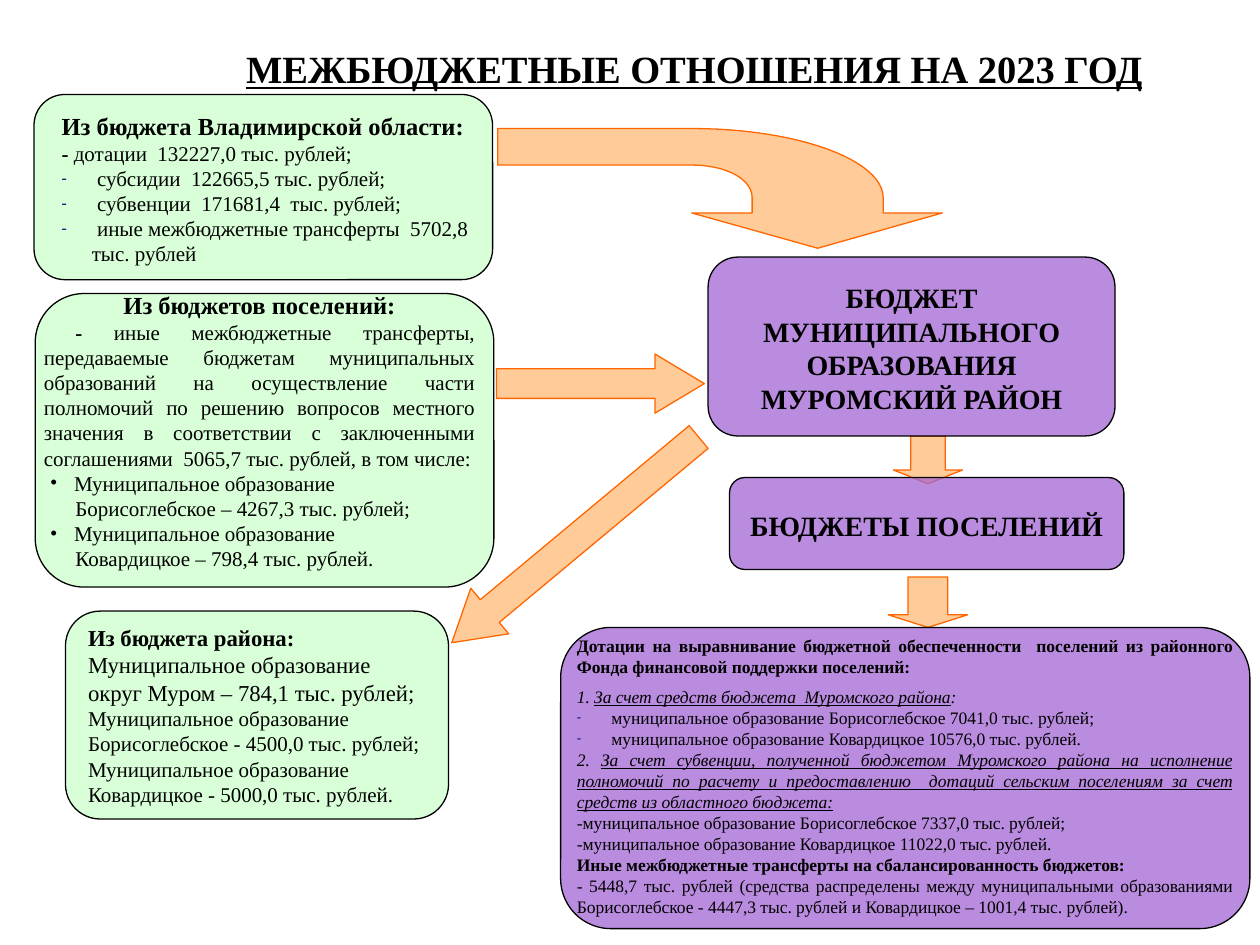
from lxml.etree import SubElement
from pptx import Presentation
from pptx.dml.color import RGBColor
from pptx.enum.shapes import MSO_SHAPE as Shape
from pptx.enum.text import MSO_ANCHOR as Anchor, PP_ALIGN as Align
from pptx.oxml.ns import qn
from pptx.util import Inches, Pt

GREEN, PURPLE, ORANGE, RUST = "CCFFCC", "A265D5", "FFCC99", "FF6600"
BLACK, NAVY = "000000", "00007D"
FONT = "Times New Roman"
BOLD, ITALIC = {"bold": True}, {"italic": True}
LINKED = {"italic": True, "underline": True}
DASH = {"bullet": "-", "left": 0.24, "first": -0.24}
DOT = {"bullet": "•", "left": 0.24, "first": -0.19}
HANG = {"left": 0.25}


def paint(shape, fill, line, opacity=100):
    shape.shadow.inherit = False
    shape.fill.solid()
    shape.fill.fore_color.rgb = RGBColor.from_string(fill)
    shape.line.color.rgb = RGBColor.from_string(line)
    shape.line.width = Pt(0.75)
    if opacity < 100:
        color = shape.fill._xPr.find(qn("a:solidFill"))[0]
        SubElement(color, qn("a:alpha"), val=str(opacity * 1000))


def write(frame, size, align, paragraphs):
    frame.word_wrap = True
    for index, (layout, runs) in enumerate(paragraphs):
        paragraph = frame.paragraphs[0] if index == 0 else frame.add_paragraph()
        paragraph.alignment = layout.get("align", align)
        paragraph.space_before = Pt(layout.get("before", 0))
        properties = paragraph._p.get_or_add_pPr()
        properties.set("marL", str(Inches(layout.get("left", 0))))
        properties.set("indent", str(Inches(layout.get("first", 0))))
        if "bullet" in layout:
            if layout["bullet"] == "-":
                color = SubElement(properties, qn("a:buClr"))
                SubElement(color, qn("a:srgbClr"), val=NAVY)
                SubElement(properties, qn("a:buSzPct"), val="75000")
            SubElement(properties, qn("a:buFont"), typeface=FONT)
            SubElement(properties, qn("a:buChar"), char=layout["bullet"])
        for text, style in runs:
            run = paragraph.add_run()
            run.text = text
            run.font.name = FONT
            run.font.color.rgb = RGBColor.from_string(BLACK)
            values = {"size": size, "bold": False, "italic": False, "underline": False, **style}
            values["size"] = Pt(values["size"])
            for name, value in values.items():
                setattr(run.font, name, value)


presentation = Presentation()
presentation.slide_width, presentation.slide_height = Inches(10), Inches(7.5)
slide = presentation.slides.add_slide(presentation.slide_layouts[5])
shapes = slide.shapes

title = shapes.title
title.left, title.top, title.width, title.height = map(Inches, (1.01, 0.25, 9, 0.58))
title.text_frame.vertical_anchor = Anchor.MIDDLE
write(title.text_frame, 22, Align.CENTER, [
    ({}, [("МЕЖБЮДЖЕТНЫЕ ОТНОШЕНИЯ НА 2023 ГОД", {"bold": True, "underline": True})]),
])

bend = [
    [(6.49, 1.97)], [(7.48, 1.69)], [(7.01, 1.69)], [(7.01, 1.57)],
    [(7.01, 1.57), (7.01, 1.27), (6.33, 1.02), (5.49, 1.02)],
    [(3.95, 1.02)], [(3.95, 1.31)], [(5.49, 1.31)],
    [(5.49, 1.31), (5.76, 1.31), (5.97, 1.42), (5.97, 1.57)],
    [(5.97, 1.69)], [(5.49, 1.69)],
]
outline = []
for part in bend:
    if len(part) == 1:
        outline.append(tuple(map(Inches, part[0])))
        continue
    for step in range(1, 25):
        t = step / 24
        weights = ((1 - t) ** 3, 3 * t * (1 - t) ** 2, 3 * t * t * (1 - t), t ** 3)
        outline.append(tuple(
            Inches(sum(weight * point[axis] for weight, point in zip(weights, part)))
            for axis in (0, 1)
        ))
builder = shapes.build_freeform(*outline[0])
builder.add_line_segments(outline[1:], close=True)
paint(builder.convert_to_shape(), ORANGE, RUST)

arrows = [
    (Shape.RIGHT_ARROW, (3.94, 2.81, 1.65, 0.47), 0.835, 0),
    (Shape.RIGHT_ARROW, (3.29, 4.05, 2.55, 0.47), 0.835, 140.2),
    (Shape.DOWN_ARROW, (7.09, 3.46, 0.55, 0.38), 0.29, 0),
    (Shape.DOWN_ARROW, (7.05, 4.58, 0.63, 0.4), 0.25, 0),
]
for kind, place, head, rotation in arrows:
    arrow = shapes.add_shape(kind, *map(Inches, place))
    arrow.adjustments[0], arrow.adjustments[1] = 0.5, head
    arrow.rotation = rotation
    paint(arrow, ORANGE, RUST)

boxes = [
    ((0.27, 0.75, 3.64, 1.47), GREEN),
    ((0.28, 2.33, 3.64, 2.33), GREEN),
    ((5.62, 2.04, 3.23, 1.42), PURPLE),
    ((5.79, 3.79, 3.13, 0.73), PURPLE),
    ((4.45, 4.98, 5.47, 2.39), PURPLE),
    ((0.52, 4.85, 3.04, 1.65), GREEN),
]
for place, fill in boxes:
    box = shapes.add_shape(Shape.FLOWCHART_ALTERNATE_PROCESS, *map(Inches, place))
    paint(box, fill, BLACK, 74)

district = box.text_frame
district.vertical_anchor = Anchor.MIDDLE
district.margin_right = 0
write(district, 12, Align.LEFT, [
    ({}, [("Из бюджета района:", {"size": 13, "bold": True})]),
    ({}, [("Муниципальное образование", {"size": 13})]),
    ({}, [("округ Муром – 784,1 тыс. рублей;", {"size": 13})]),
    ({}, [("Муниципальное образование", {})]),
    ({}, [("Борисоглебское - 4500,0 тыс. рублей;", {})]),
    ({}, [("Муниципальное образование", {})]),
    ({}, [("Ковардицкое - 5000,0 тыс. рублей.", {})]),
])

texts = [
    ((0.39, 0.83, 3.51, 1.35), 12, Align.LEFT, [
        ({}, [("Из бюджета Владимирской области:", {"size": 14, "bold": True})]),
        ({}, [("-", BOLD), (" дотации  132227,0 тыс. рублей;", {})]),
        (DASH, [(" субсидии  122665,5 тыс. рублей;", {})]),
        (DASH, [(" субвенции  171681,4  тыс. рублей;", {})]),
        (DASH, [(" иные межбюджетные трансферты  5702,8 тыс. рублей", {})]),
    ]),
    ((0.25, 2.25, 3.62, 2.36), 12, Align.JUSTIFY, [
        ({"align": Align.CENTER}, [("Из бюджетов поселений:", {"size": 14, "bold": True})]),
        ({"first": 0.25}, [("-", BOLD), (
            " иные межбюджетные трансферты, передаваемые бюджетам муниципальных образований "
            "на осуществление части полномочий по решению вопросов местного значения в соответствии "
            "с заключенными соглашениями  5065,7 тыс. рублей, в том числе:", {})]),
        (DOT, [("Муниципальное образование", {})]),
        (HANG, [("Борисоглебское – 4267,3 тыс. рублей;", {})]),
        (DOT, [("Муниципальное образование", {})]),
        (HANG, [("Ковардицкое – 798,4 тыс. рублей.", {})]),
    ]),
    ((5.74, 2.18, 2.99, 1.1), 16, Align.CENTER, [
        ({}, [("БЮДЖЕТ МУНИЦИПАЛЬНОГО ОБРАЗОВАНИЯ МУРОМСКИЙ РАЙОН", BOLD)]),
    ]),
    ((5.82, 3.99, 3.07, 0.35), 16, Align.CENTER, [
        ({}, [("БЮДЖЕТЫ ПОСЕЛЕНИЙ", BOLD)]),
    ]),
    ((4.48, 4.99, 5.4, 2.51), 10, Align.JUSTIFY, [
        ({}, [("Дотации на выравнивание бюджетной обеспеченности  поселений из районного "
               "Фонда финансовой поддержки поселений:", BOLD)]),
        ({"before": 5}, [("1. ", ITALIC), ("За счет средств бюджета  Муромского района", LINKED), (":", ITALIC)]),
        (DASH, [(" муниципальное образование Борисоглебское 7041,0 тыс. рублей;", {})]),
        (DASH, [(" муниципальное образование Ковардицкое 10576,0 тыс. рублей.", {})]),
        ({}, [("2. ", ITALIC), (
            "За счет субвенции, полученной бюджетом Муромского района на исполнение полномочий "
            "по расчету и предоставлению  дотаций сельским поселениям за счет средств "
            "из областного бюджета:", LINKED)]),
        ({}, [("-муниципальное образование Борисоглебское 7337,0 тыс. рублей;", {})]),
        ({}, [("-муниципальное образование Ковардицкое 11022,0 тыс. рублей.", {})]),
        ({}, [("Иные межбюджетные трансферты на сбалансированность бюджетов:", BOLD)]),
        ({}, [("- 5448,7 тыс. рублей (средства распределены между муниципальными образованиями "
               "Борисоглебское - 4447,3 тыс. рублей и Ковардицкое – 1001,4 тыс. рублей).", {})]),
    ]),
]
for place, size, align, paragraphs in texts:
    textbox = shapes.add_textbox(*map(Inches, place))
    write(textbox.text_frame, size, align, paragraphs)

presentation.save("out.pptx")
